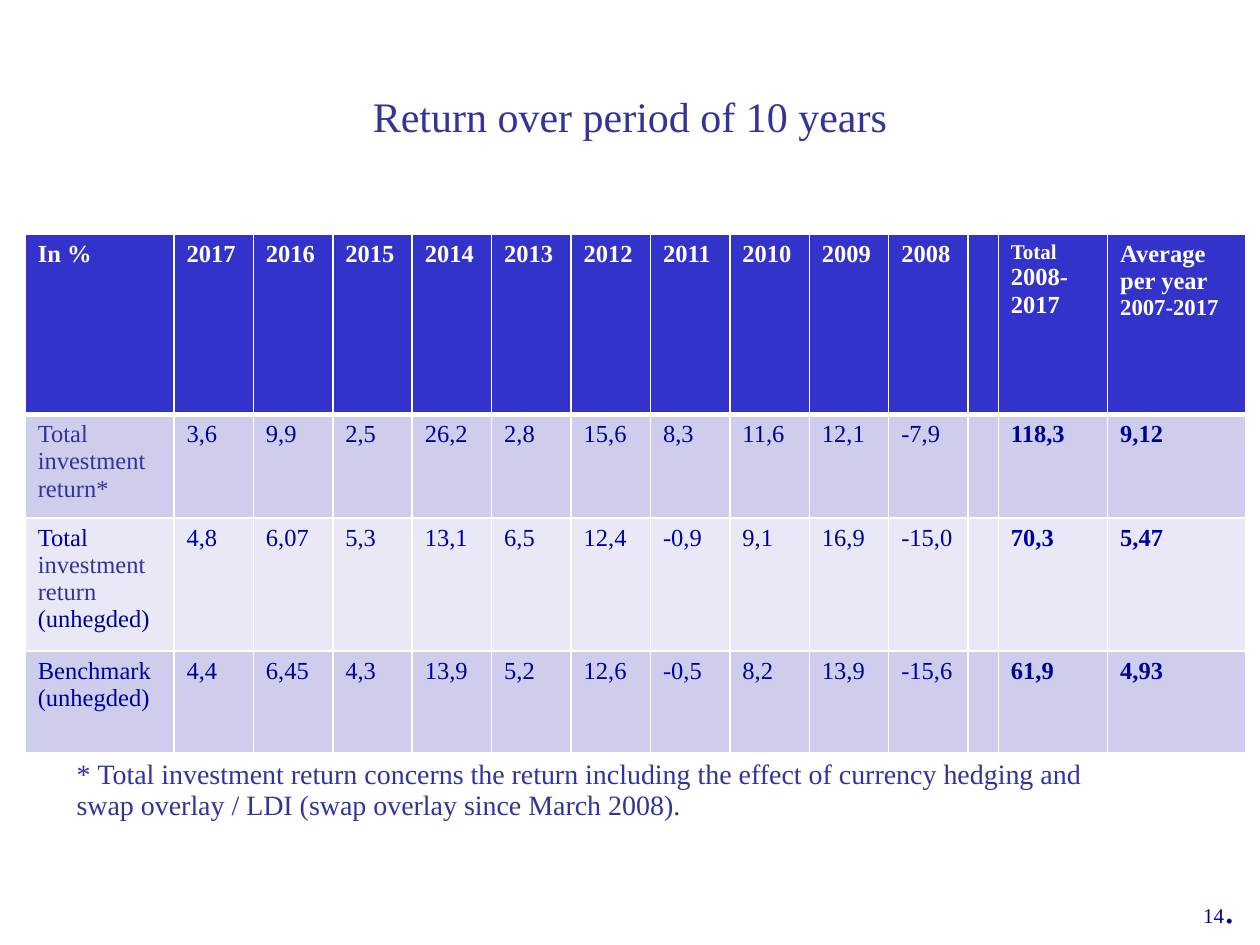
from lxml.etree import SubElement as Sub
from pptx import Presentation
from pptx.dml.color import RGBColor as Rgb
from pptx.enum.text import PP_ALIGN as Align
from pptx.oxml.ns import qn
from pptx.util import Pt

FONT = "Times New Roman"
HEX = {
    "navy": "000099", "ink": "333399", "star": "2D2DB9", "white": "FFFFFF",
    "head": "3333CC", "dark": "CECEEC", "light": "E8E8F6",
}
COLS = [85] + [45.4] * 10 + [17, 62.5, 79.2]
ROWS = [103, 59, 76, 58]
YEARS = [str(year) for year in range(2017, 2007, -1)]
GAP = 11  # empty column between the years and the totals
DATA = [
    "3,6 9,9 2,5 26,2 2,8 15,6 8,3 11,6 12,1 -7,9 118,3 9,12",
    "4,8 6,07 5,3 13,1 6,5 12,4 -0,9 9,1 16,9 -15,0 70,3 5,47",
    "4,4 6,45 4,3 13,9 5,2 12,6 -0,5 8,2 13,9 -15,6 61,9 4,93",
]
LABELS = [
    [("Total investment return*", "ink")],
    [("Total ", "navy"), ("investment return ", "ink"), ("(unhegded)", "navy")],
    [("Benchmark (unhegded)", "navy")],
]


def write(para, text, size=14, color="navy", bold=False):
    run = para.add_run()
    run.text = text
    font = run.font
    font.name, font.size, font.bold = FONT, Pt(size), bold
    font.color.rgb = Rgb.from_string(HEX[color])


def add_box(slide, left, top, width, height, wrap=True):
    box = slide.shapes.add_textbox(Pt(left), Pt(top), Pt(width), Pt(height))
    box.text_frame.word_wrap = wrap
    return box.text_frame


def add_edge(cell, side, width):
    line = Sub(cell._tc.get_or_add_tcPr(), qn(f"a:ln{side}"), w=str(Pt(width)))
    fill = Sub(line, qn("a:solidFill"))
    Sub(fill, qn("a:srgbClr"), val=HEX["white"])


def style(cell, row):
    # Thick rule below the header, thin rules elsewhere
    thick = {"T": row == 1, "B": row == 0}
    for side in "LRTB":
        add_edge(cell, side, 3 if thick.get(side) else 1)
    cell.fill.solid()
    shade = "head" if row == 0 else "dark" if row % 2 else "light"
    cell.fill.fore_color.rgb = Rgb.from_string(HEX[shade])


def add_grid(slide):
    shape = slide.shapes.add_table(
        len(ROWS), len(COLS), Pt(14.4), Pt(134), Pt(sum(COLS)), Pt(sum(ROWS)))
    grid = shape.table
    for col, width in zip(grid.columns, COLS):
        col.width = Pt(width)
    for row, height in zip(grid.rows, ROWS):
        row.height = Pt(height)
    for row in range(len(ROWS)):
        for col in range(len(COLS)):
            style(grid.cell(row, col), row)
    return grid


def fill_head(grid):
    look = {"color": "white", "bold": True}
    for col, text in enumerate(["In %"] + YEARS):
        write(grid.cell(0, col).text_frame.paragraphs[0], text, **look)
    total = grid.cell(0, GAP + 1).text_frame.paragraphs[0]
    write(total, "Total ", size=12, **look)
    write(total, "2008-2017", **look)
    mean = grid.cell(0, GAP + 2).text_frame
    write(mean.paragraphs[0], "Average per year", **look)
    write(mean.add_paragraph(), "2007-2017", size=13, **look)


def fill_body(grid):
    for row, (label, line) in enumerate(zip(LABELS, DATA), 1):
        para = grid.cell(row, 0).text_frame.paragraphs[0]
        for text, color in label:
            write(para, text, color=color)
        for col, text in enumerate(line.split(), 1):
            late = col >= GAP
            cell = grid.cell(row, col + late)
            write(cell.text_frame.paragraphs[0], text, bold=late)


def main():
    deck = Presentation()
    deck.slide_width, deck.slide_height = Pt(720), Pt(540)
    slide = deck.slides.add_slide(deck.slide_layouts[6])

    # Page number
    page = add_box(slide, 680.4, 500.4, 34.6, 36, wrap=False).paragraphs[0]
    write(page, "14", size=12)
    write(page, ".", size=24)

    # Title
    title = add_box(slide, 54, 48.2, 612, 46).paragraphs[0]
    title.alignment = Align.CENTER
    write(title, "Return over period of 10 years", size=24, color="ink")

    # Footnote, set low in its box
    frame = add_box(slide, 36.7, 411.8, 612, 67.7)
    frame.margin_top = Pt(23)
    note = frame.paragraphs[0]
    note.line_spacing = 0.9
    write(note, "* ", size=16, color="star")
    write(note, "Total investment return concerns the return including the "
          "effect of currency hedging and swap overlay / LDI (swap overlay "
          "since March 2008).", size=16, color="ink")

    # Table of returns
    grid = add_grid(slide)
    fill_head(grid)
    fill_body(grid)
    deck.save("out.pptx")


if __name__ == "__main__":
    main()
